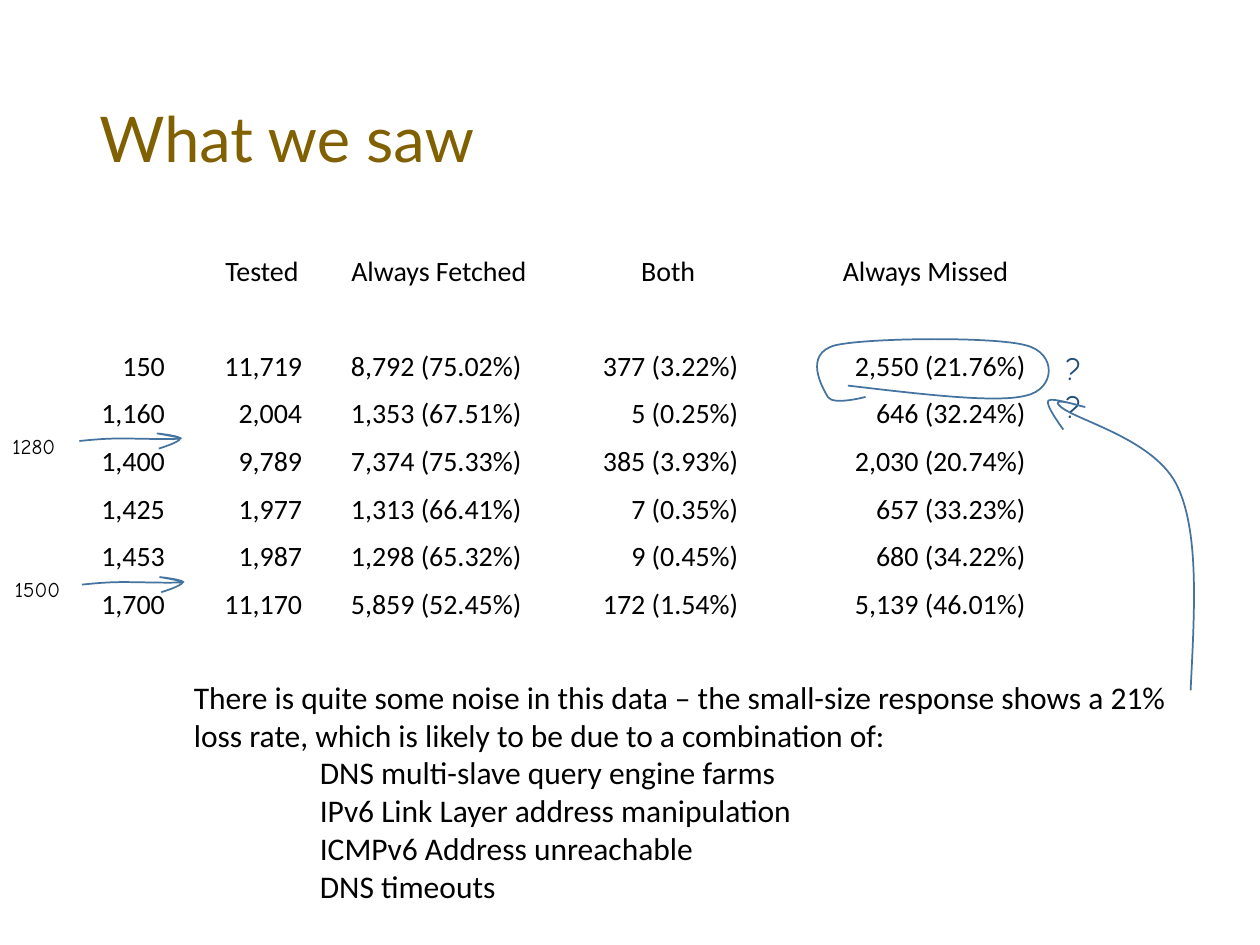
from lxml.etree import SubElement
from pptx import Presentation
from pptx.dml.color import RGBColor
from pptx.enum.text import MSO_ANCHOR as Anchor
from pptx.oxml.ns import qn
from pptx.util import Inches, Pt

THEME = {
    "title": {"font": "Lato", "size": 36, "color": "806000"},
    "results": {"font": "Calibri", "size": 16, "color": "000000"},
    "note": {"font": "Calibri", "size": 18, "color": "000000"},
    "label": {"font": "Comic Neue", "size": 12, "color": "000000"},
    "query": {"font": "Comic Neue", "size": 18, "color": "1F4E79"},
    "ink": "43739E",
}

HEADERS = ["Tested", "Always Fetched", "Both", "Always Missed"]
RESULTS = [
    ["150", "11,719", "8,792 (75.02%)", "377 (3.22%)", "2,550 (21.76%)"],
    ["1,160", "2,004", "1,353 (67.51%)", "5 (0.25%)", "646 (32.24%)"],
    ["1,400", "9,789", "7,374 (75.33%)", "385 (3.93%)", "2,030 (20.74%)"],
    ["1,425", "1,977", "1,313 (66.41%)", "7 (0.35%)", "657 (33.23%)"],
    ["1,453", "1,987", "1,298 (65.32%)", "9 (0.45%)", "680 (34.22%)"],
    ["1,700", "11,170", "5,859 (52.45%)", "172 (1.54%)", "5,139 (46.01%)"],
]
HEADER_TABS = [("l", stop) for stop in (1, 2, 4.3, 5.9)]
RESULT_TABS = [("r", stop) for stop in (0.52, 1.61, 3.35, 5.07, 7.35)]
ROW_GAP, HEADER_GAP = 10, 37

NOTE = [
    "There is quite some noise in this data – the small-size response shows a 21%",
    "loss rate, which is likely to be due to a combination of:",
]
CAUSES = [
    "DNS multi-slave query engine farms",
    "IPv6 Link Layer address manipulation",
    "ICMPv6 Address unreachable",
    "DNS timeouts",
]

MARKERS = [("1280", (0, 3.39), (0.63, 3.5)), ("1500", (0.02, 4.53), (0.65, 4.64))]
MARKER_BOX = (0, -0.06, 0.8, 0.12)
MARKER_ARROW = [
    (0, 0), (0.1, -0.01), (0.2, -0.02), (0.33, -0.02),
    (0.46, -0.02), (0.75, -0.01), (0.8, -0.02),
    (0.85, -0.02), (0.62, -0.06), (0.62, -0.06),
    (0.62, -0.06), (0.8, -0.04), (0.8, -0.02),
    (0.8, 0.01), (0.63, 0.06), (0.63, 0.06),
]
LOOP_BOX = (6.49, 2.69, 1.84, 0.49)
LOOP = [
    (6.73, 3.06), (7.32, 3.13), (7.91, 3.2), (8.14, 3.14),
    (8.38, 3.09), (8.39, 2.8), (8.14, 2.74),
    (7.89, 2.67), (6.89, 2.68), (6.63, 2.74),
    (6.37, 2.81), (6.53, 3.08), (6.57, 3.15),
    (6.61, 3.22), (6.87, 3.15), (6.87, 3.15),
]
NOTE_ARROW_BOX = (8.32, 3.17, 1.16, 2.3)
NOTE_ARROW = [
    (9.45, 5.48), (9.48, 4.86), (9.52, 4.24), (9.35, 3.87),
    (9.18, 3.49), (8.55, 3.34), (8.42, 3.23),
    (8.3, 3.13), (8.63, 3.24), (8.61, 3.23),
    (8.59, 3.23), (8.35, 3.15), (8.32, 3.18),
    (8.29, 3.21), (8.44, 3.41), (8.44, 3.41),
]


def write(paragraph, text, font, size, color, spacing=None, before=None, indent=0, tabs=()):
    """Fill a paragraph with formatted text."""
    if spacing:
        paragraph.line_spacing = spacing
    if before:
        paragraph.space_before = Pt(before)
    properties = paragraph._p.get_or_add_pPr()
    if indent:
        properties.set("marL", str(Inches(indent)))
    if tabs:
        tab_list = SubElement(properties, qn("a:tabLst"))
        for align, stop in tabs:
            SubElement(tab_list, qn("a:tab"), pos=str(Inches(stop)), algn=align)
    run = paragraph.add_run()
    run.text = text
    run.font.name = font
    run.font.size = Pt(size)
    run.font.color.rgb = RGBColor.from_string(color)


def add_text(slide, box, lines, style, wrap=False, anchor=Anchor.TOP):
    """Add a text box holding (text, format) lines."""
    frame = slide.shapes.add_textbox(*map(Inches, box)).text_frame
    frame.word_wrap = wrap
    frame.vertical_anchor = anchor
    for index, (text, options) in enumerate(lines):
        paragraph = frame.add_paragraph() if index else frame.paragraphs[0]
        write(paragraph, text, **THEME[style], **options)


def result_lines():
    """Return the header and result rows set on tab stops."""
    rows = [(HEADERS, HEADER_TABS, ROW_GAP)]
    rows += [(values, RESULT_TABS, ROW_GAP if index else HEADER_GAP)
             for index, values in enumerate(RESULTS)]
    return [("\t" + "\t".join(values), {"tabs": tabs, "before": gap, "spacing": 0.9})
            for values, tabs, gap in rows]


def add_stroke(slide, box, knots, origin=(0, 0)):
    """Draw an open pen stroke of joined cubic curves."""
    left, top, width, height = box
    corners = [(Inches(origin[0] + x), Inches(origin[1] + y))
               for x, y in ((left, top), (left + width, top + height))]
    builder = slide.shapes.build_freeform(*corners[0])
    builder.add_line_segments(corners[1:], close=False)
    shape = builder.convert_to_shape()
    outline = next(shape._element.iter(qn("a:path")))
    for child in list(outline):
        outline.remove(child)
    groups = [("a:moveTo", knots[:1])]
    groups += [("a:cubicBezTo", knots[start:start + 3]) for start in range(1, len(knots), 3)]
    for tag, points in groups:
        command = SubElement(outline, qn(tag))
        for x, y in points:
            SubElement(command, qn("a:pt"), x=str(Inches(x - left)), y=str(Inches(y - top)))
    shape.shadow.inherit = False
    shape.fill.background()
    shape.line.color.rgb = RGBColor.from_string(THEME["ink"])
    shape.line.width = Pt(1)


def main():
    """Build and save the slide."""
    presentation = Presentation()
    presentation.slide_width, presentation.slide_height = Inches(10), Inches(7.5)
    slide = presentation.slides.add_slide(presentation.slide_layouts[6])
    add_text(slide, (0.69, 0.4, 8.62, 1.45), [("What we saw", {"spacing": 0.9})], "title",
             wrap=True, anchor=Anchor.MIDDLE)
    add_text(slide, (0.69, 1.99, 8.62, 4.76), result_lines(), "results", wrap=True)
    add_stroke(slide, LOOP_BOX, LOOP)
    add_text(slide, (8.36, 2.72, 0.41, 0.4), [("??", {})], "query", wrap=True)
    for label, position, arrow_start in MARKERS:
        add_text(slide, (*position, 0.62, 0.3), [(label, {})], "label")
        add_stroke(slide, MARKER_BOX, MARKER_ARROW, arrow_start)
    note_lines = [(text, {}) for text in NOTE] + [(text, {"indent": 1}) for text in CAUSES]
    add_text(slide, (1.44, 5.33, 8.01, 1.92), note_lines, "note")
    add_stroke(slide, NOTE_ARROW_BOX, NOTE_ARROW)
    presentation.save("out.pptx")


if __name__ == "__main__":
    main()
